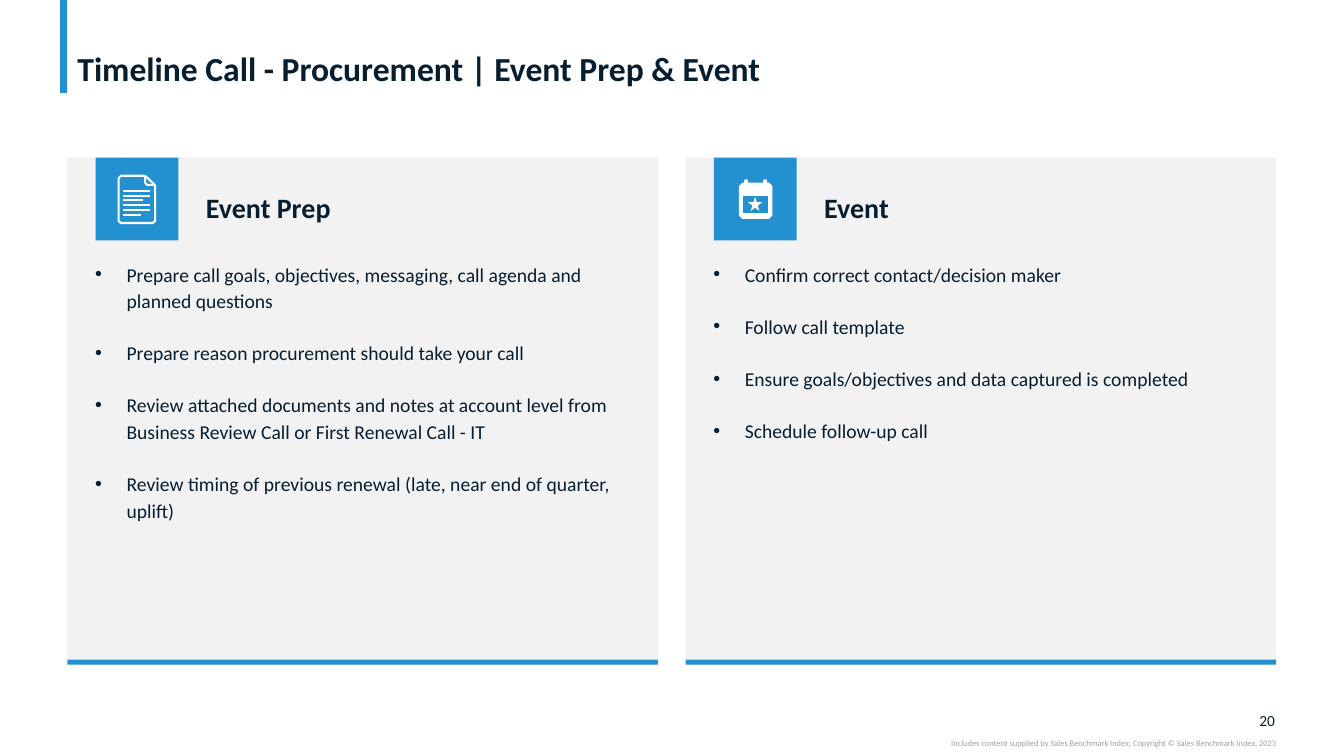
"""Builds the procurement timeline slide with its Event Prep and Event panels."""
import pptx
import pptx.dml.color
import pptx.enum.shapes
import pptx.enum.text
import pptx.oxml.ns
import pptx.util
from lxml import etree

Cm = pptx.util.Cm
Pt = pptx.util.Pt
RGBColor = pptx.dml.color.RGBColor
SHAPE = pptx.enum.shapes.MSO_SHAPE
ALIGN = pptx.enum.text.PP_ALIGN
ANCHOR = pptx.enum.text.MSO_ANCHOR
qn = pptx.oxml.ns.qn

BLUE = RGBColor(0x23, 0x91, 0xCF)
NAVY = RGBColor(0x07, 0x1E, 0x31)
PALE = RGBColor(0xF2, 0xF2, 0xF2)
GREY = RGBColor(0xA0, 0xA0, 0xA0)
WHITE = RGBColor(0xFF, 0xFF, 0xFF)

PANEL_LEFT, PANEL_TOP, PANEL_WIDTH, PANEL_HEIGHT = 1.7, 3.97, 14.88, 12.65
PANEL_PITCH = 15.58
TILE_INSET, TILE_SIZE = 0.71, 2.09


class SlideBuilder:
    """Holds the style and the current slide; lengths are in centimetres."""

    font = "Calibri"
    icon_stroke = 1.5

    def __init__(self, slide):
        self.slide = slide

    def paint(self, shape, fill=None, line=None):
        shape.shadow.inherit = False
        if fill is None:
            shape.fill.background()
        else:
            shape.fill.solid()
            shape.fill.fore_color.rgb = fill
        if line is None:
            shape.line.fill.background()
        else:
            shape.line.color.rgb = line
            shape.line.width = Pt(self.icon_stroke)

    def shape(self, x, y, w, h, fill, kind=SHAPE.RECTANGLE, line=None, group=None):
        shapes = (group or self.slide).shapes
        shape = shapes.add_shape(kind, Cm(x), Cm(y), Cm(w), Cm(h))
        self.paint(shape, fill, line)

    def outline(self, group, x, y, contours, fill=None, close=True):
        contours = [[(Cm(x + dx), Cm(y + dy)) for dx, dy in contour]
                    for contour in contours]
        builder = group.shapes.build_freeform(*contours[0][0])
        for index, contour in enumerate(contours):
            if index:
                builder.move_to(*contour[0])
            builder.add_line_segments(contour[1:], close=close)
        self.paint(builder.convert_to_shape(), fill, WHITE)

    def line(self, x1, y1, x2, y2, color, width, group=None):
        line = (group or self.slide).shapes.add_connector(
            pptx.enum.shapes.MSO_CONNECTOR.STRAIGHT, Cm(x1), Cm(y1), Cm(x2), Cm(y2))
        line.line.color.rgb = color
        line.line.width = Pt(width)
        etree.SubElement(line._element.spPr, qn("a:effectLst"))

    def text(self, paragraph, wording, size, color=NAVY, bold=False, align=ALIGN.LEFT):
        paragraph.alignment = align
        run = paragraph.add_run()
        run.text = wording
        run.font.name = self.font
        run.font.size = Pt(size)
        run.font.bold = bold
        run.font.color.rgb = color

    def title(self, wording):
        title = self.slide.shapes.title
        title.left, title.top, title.width, title.height = Cm(1.7), Cm(0.1), Cm(30.45), Cm(2.13)
        frame = title.text_frame
        frame.auto_size = pptx.enum.text.MSO_AUTO_SIZE.NONE
        frame.vertical_anchor = ANCHOR.BOTTOM
        frame.margin_left = frame.margin_right = Cm(0.25)
        frame.margin_top = frame.margin_bottom = 0
        frame.paragraphs[0].line_spacing = 0.9
        self.text(frame.paragraphs[0], wording, 24, bold=True)

    def frame(self, x, y, w, h, anchor=ANCHOR.TOP):
        frame = self.slide.shapes.add_textbox(Cm(x), Cm(y), Cm(w), Cm(h)).text_frame
        frame.word_wrap = True
        frame.vertical_anchor = anchor
        frame.margin_left = frame.margin_right = frame.margin_top = frame.margin_bottom = 0
        return frame

    def label(self, x, y, w, h, wording, size, anchor=ANCHOR.TOP, **style):
        self.text(self.frame(x, y, w, h, anchor).paragraphs[0], wording, size, **style)

    def bullets(self, x, y, w, h, items):
        frame = self.frame(x, y, w, h)
        for index, item in enumerate(items):
            paragraph = frame.add_paragraph() if index else frame.paragraphs[0]
            properties = paragraph._p.get_or_add_pPr()
            properties.set("marL", str(Cm(0.79)))
            properties.set("indent", str(-Cm(0.79)))
            etree.SubElement(properties, qn("a:buFont"), typeface="Arial")
            etree.SubElement(properties, qn("a:buChar"), char="•")
            paragraph.line_spacing = 1.14
            paragraph.space_before = Pt(12 if index else 0)
            paragraph.space_after = Pt(6)
            self.text(paragraph, item, 14)

    def icon_tile(self, x, y):
        group = self.slide.shapes.add_group_shape()
        self.shape(x, y, TILE_SIZE, TILE_SIZE, BLUE, group=group)
        return group

    def document_icon(self, x, y):
        group = self.icon_tile(x, y)
        fold = [(1.25, 0.46), (1.25, 0.64), (1.3, 0.69), (1.5, 0.69)]
        page = [(1.22, 0.46), (0.64, 0.46), (0.58, 0.52), (0.58, 1.6), (0.64, 1.65),
                (1.44, 1.65), (1.5, 1.6), (1.5, 0.71), (1.46, 0.66), (1.27, 0.48)]
        self.outline(group, x, y, [fold], close=False)
        self.outline(group, x, y, [page])
        for row, end in enumerate((1.37, 1.37, 1.19, 1.37, 1.37, 1.14)):
            row_y = y + 0.84 + row * 0.12
            self.line(x + 0.69, row_y, x + end, row_y, WHITE, self.icon_stroke, group)

    def calendar_icon(self, x, y):
        group = self.icon_tile(x, y)
        for ring in (0.79, 1.27):
            self.shape(x + ring, y + 0.58, 0.05, 0.18, WHITE,
                       SHAPE.ROUNDED_RECTANGLE, WHITE, group)
        body = [(0.73, 0.66), (1.38, 0.66), (1.45, 0.73), (1.45, 1.45),
                (1.38, 1.52), (0.73, 1.52), (0.66, 1.45), (0.66, 0.73)]
        window = [(0.71, 0.94), (0.71, 1.42), (1.4, 1.42), (1.4, 0.94)]
        self.outline(group, x, y, [body, window], WHITE)
        self.shape(x + 0.86, y + 0.99, 0.36, 0.36, WHITE, SHAPE.STAR_5_POINT, group=group)

    def panel(self, x, heading, icon, items):
        self.shape(x, PANEL_TOP, PANEL_WIDTH, PANEL_HEIGHT, PALE)
        self.shape(x, PANEL_TOP + PANEL_HEIGHT, PANEL_WIDTH, 0.13, BLUE)
        icon(x + TILE_INSET, PANEL_TOP)
        self.label(x + 3.49, 4.8, 8.13, 0.86, heading, 20, bold=True)
        self.bullets(x + 0.7, 6.53, 13.39, 6.68, items)


def main():
    deck = pptx.Presentation()
    deck.slide_width, deck.slide_height = Cm(33.87), Cm(19.05)
    builder = SlideBuilder(deck.slides.add_slide(deck.slide_layouts[5]))
    builder.line(1.6, 0, 1.6, 2.34, BLUE, 5)
    builder.title("Timeline Call - Procurement | Event Prep & Event")
    panels = [
        ("Event Prep", builder.document_icon, [
            "Prepare call goals, objectives, messaging, call agenda and planned questions",
            "Prepare reason procurement should take your call",
            "Review attached documents and notes at account level from "
            "Business Review Call or First Renewal Call - IT",
            "Review timing of previous renewal (late, near end of quarter, uplift)"]),
        ("Event", builder.calendar_icon, [
            "Confirm correct contact/decision maker",
            "Follow call template",
            "Ensure goals/objectives and data captured is completed",
            "Schedule follow-up call"]),
    ]
    for column, (heading, icon, items) in enumerate(panels):
        builder.panel(PANEL_LEFT + column * PANEL_PITCH, heading, icon, items)
    builder.label(31.29, 17.91, 0.84, 0.48, "20", 11, ANCHOR.MIDDLE, align=ALIGN.RIGHT)
    builder.label(19.05, 18.59, 13.11, 0.25,
                  "Includes content supplied by Sales Benchmark Index; "
                  "Copyright © Sales Benchmark Index, 2023",
                  6, color=GREY, align=ALIGN.RIGHT)
    deck.save("out.pptx")


if __name__ == "__main__":
    main()
